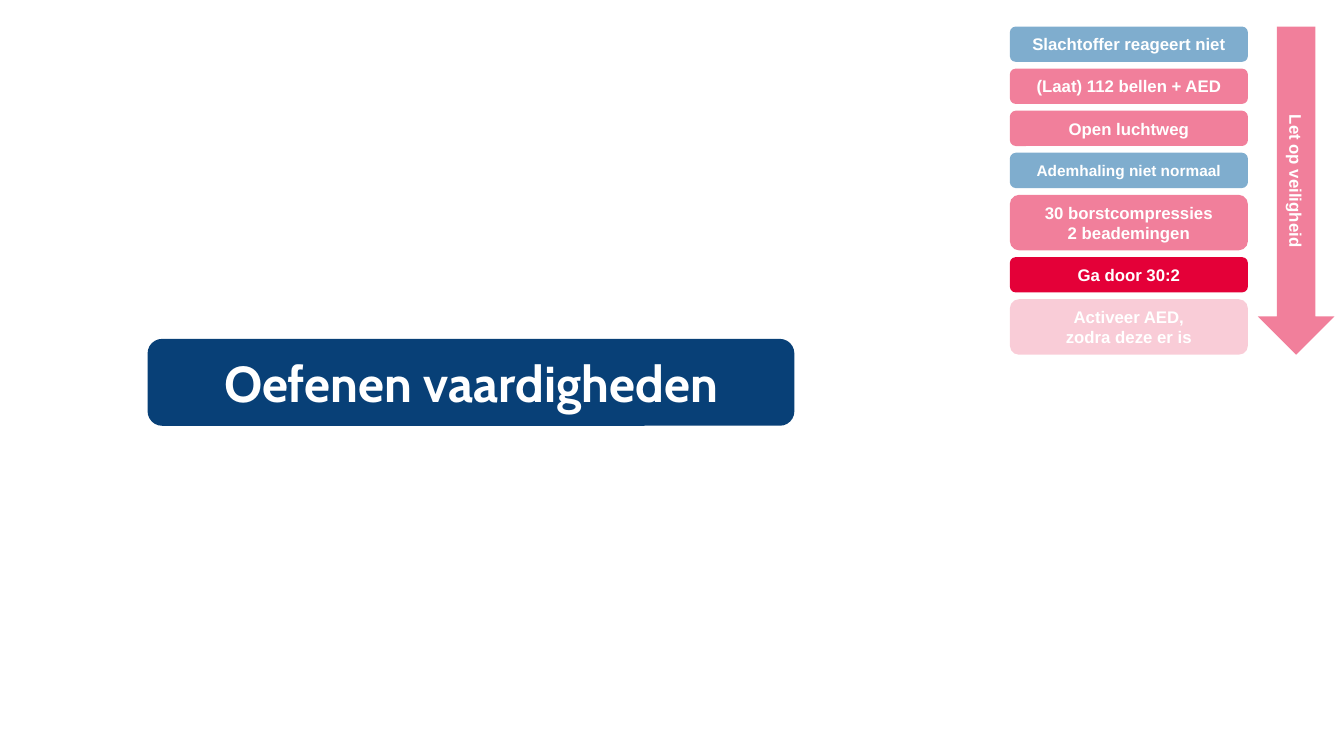
from lxml.etree import SubElement
from pptx import Presentation
from pptx.dml.color import RGBColor
from pptx.enum.shapes import MSO_SHAPE
from pptx.enum.text import MSO_ANCHOR, PP_ALIGN
from pptx.oxml.ns import qn
from pptx.util import Cm, Pt

COLORS = {"red": "E40038", "blue": "005D9F", "navy": "084077", "white": "FFFFFF"}
STEPS = [  # lines, color, opacity in percent, text size
    (["Slachtoffer reageert niet"], "blue", 50, 12),
    (["(Laat) 112 bellen + AED"], "red", 50, 12),
    (["Open luchtweg"], "red", 50, 12),
    (["Ademhaling niet normaal"], "blue", 50, 11),
    (["30 borstcompressies", "2 beademingen"], "red", 50, 12),
    (["Ga door 30:2"], "red", 100, 12),
    (["Activeer AED,", "zodra deze er is"], "red", 20, 12),
]
HEIGHTS = {1: 0.89, 2: 1.4}  # step height by number of lines
GAP = 0.17


def add_block(slide, kind, box, lines, color, alpha=100, size=12, face="Arial"):
    """Add a filled shape with centred bold text; box is in centimetres."""
    shape = slide.shapes.add_shape(kind, *map(Cm, box))
    shape.shadow.inherit = False
    shape.line.fill.background()
    shape.fill.solid()
    shape.fill.fore_color.rgb = RGBColor.from_string(COLORS[color])
    if alpha < 100:
        tint = shape.fill._xPr.find(".//" + qn("a:srgbClr"))
        SubElement(tint, qn("a:alpha"), val=str(alpha * 1000))
    frame = shape.text_frame
    frame.word_wrap = True
    frame.vertical_anchor = MSO_ANCHOR.MIDDLE
    style = {"name": face, "size": Pt(size), "bold": True}
    for i, line in enumerate(lines):
        para = frame.add_paragraph() if i else frame.paragraphs[0]
        para.alignment = PP_ALIGN.CENTER
        run = para.add_run()
        run.text = line
        for key, value in style.items():
            setattr(run.font, key, value)
        run.font.color.rgb = RGBColor.from_string(COLORS["white"])
    return shape


def add_steps(slide, left, top, width):
    """Stack the steps downwards and return their total height."""
    y = top
    for lines, color, alpha, size in STEPS:
        height = HEIGHTS[len(lines)]
        add_block(slide, MSO_SHAPE.ROUNDED_RECTANGLE, (left, y, width, height),
                  lines, color, alpha, size)
        y += height + GAP
    return y - GAP - top


def add_arrow(slide, box):
    arrow = add_block(slide, MSO_SHAPE.DOWN_ARROW, box,
                      ["Let op veiligheid"], "red", 50)
    arrow.text_frame._txBody.bodyPr.set("vert", "vert")


def add_title(slide, box):
    add_block(slide, MSO_SHAPE.ROUNDED_RECTANGLE, box,
              ["Oefenen vaardigheden"], "navy", size=36, face="Cabin")


def main():
    deck = Presentation()
    deck.slide_width, deck.slide_height = Cm(33.87), Cm(19.05)
    slide = deck.slides.add_slide(deck.slide_layouts[6])
    top = 0.67
    height = add_steps(slide, 25.45, top, 6)
    add_arrow(slide, (31.7, top, 1.93, height))
    add_title(slide, (3.72, 8.54, 16.3, 2.19))
    deck.save("out.pptx")


if __name__ == "__main__":
    main()
